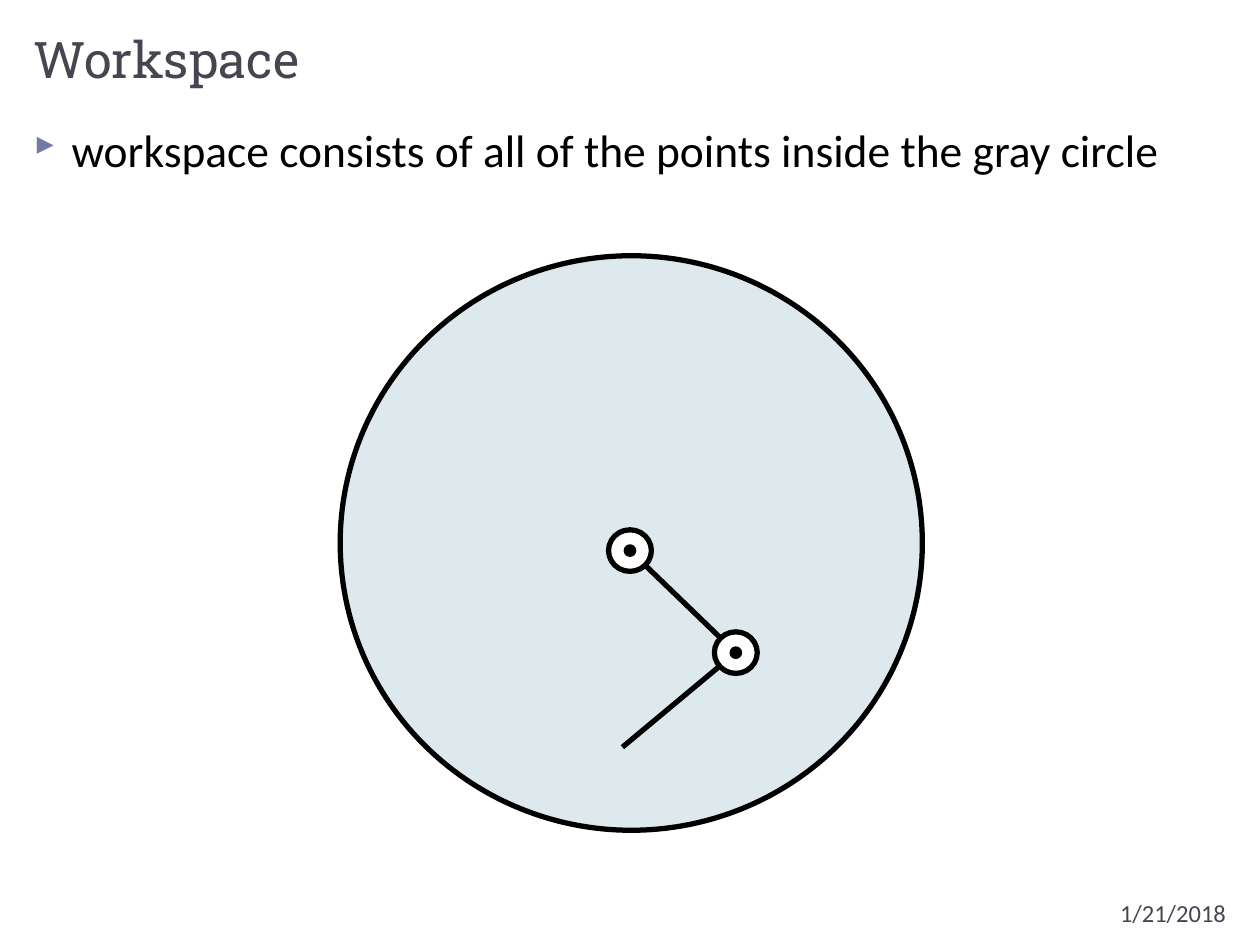
from lxml import etree
from pptx import Presentation
from pptx.dml.color import RGBColor
from pptx.enum.shapes import MSO_CONNECTOR, MSO_SHAPE
from pptx.enum.text import MSO_ANCHOR, PP_ALIGN
from pptx.oxml.ns import qn
from pptx.util import Inches, Pt

OVAL = MSO_SHAPE.OVAL
STRAIGHT = MSO_CONNECTOR.STRAIGHT
TOP, BOTTOM = MSO_ANCHOR.TOP, MSO_ANCHOR.BOTTOM
LEFT, RIGHT = PP_ALIGN.LEFT, PP_ALIGN.RIGHT


def color(value):
    return RGBColor.from_string(value)


class SlideBuilder:
    INK = "000000"
    HEADING = "464653"
    BULLET = "727CA3"
    AREA = "DDE9EC"
    WHITE = "FFFFFF"
    BODY_FONT = "Calibri"
    TITLE_FONT = "Roboto Slab"
    BULLET_FONT = "Wingdings 3"

    def __init__(self, page):
        self.page = page

    def text(self, words, place, font, align=LEFT, anchor=TOP, bullet=False):
        box = self.page.shapes.add_textbox(*map(Inches, place))
        frame = box.text_frame
        frame.word_wrap = True
        frame.vertical_anchor = anchor
        para = frame.paragraphs[0]
        para.alignment = align
        if bullet:
            self.bullet(para)
        span = para.add_run()
        span.text = words
        span.font.color.rgb = color(font["color"])
        for name in ("name", "size"):
            setattr(span.font, name, font[name])

    def bullet(self, para):
        properties = para._p.get_or_add_pPr()
        properties.set("marL", str(Inches(0.3)))
        properties.set("indent", str(Inches(-0.3)))
        tint = etree.SubElement(properties, qn("a:buClr"))
        etree.SubElement(tint, qn("a:srgbClr"), val=self.BULLET)
        etree.SubElement(properties, qn("a:buSzPct"), val="76000")
        # In this symbol font the closing brace is a right-pointing triangle
        etree.SubElement(properties, qn("a:buFont"),
                         typeface=self.BULLET_FONT, charset="2")
        etree.SubElement(properties, qn("a:buChar"), char="}")

    def ellipse(self, center, size, fill, weight=3):
        (x, y), (width, height) = center, size
        place = (x - width / 2, y - height / 2, width, height)
        shape = self.page.shapes.add_shape(OVAL, *map(Inches, place))
        shape.shadow.inherit = False
        shape.fill.solid()
        shape.fill.fore_color.rgb = color(fill)
        shape.line.color.rgb = color(self.INK)
        shape.line.width = Pt(weight)

    def joint(self, center):
        self.ellipse(center, (0.34, 0.33), self.WHITE)
        self.ellipse(center, (0.08, 0.08), self.INK, 1.5)

    def link(self, start, end):
        line = self.page.shapes.add_connector(STRAIGHT, *map(Inches, start + end))
        line.line.color.rgb = color(self.INK)
        line.line.width = Pt(3)
        etree.SubElement(line._element.spPr, qn("a:effectLst"))


def main():
    deck = Presentation()
    deck.slide_width, deck.slide_height = Inches(10), Inches(7.5)
    page = deck.slides.add_slide(deck.slide_layouts[6])
    slide = SlideBuilder(page)

    # Reachable workspace
    slide.ellipse((5.01, 4.31), (4.62, 4.56), slide.AREA)

    # Title, date and statement
    slide.text("Workspace", (0.17, 0.17, 9.67, 0.58),
               {"name": slide.TITLE_FONT, "size": Pt(28.8), "color": slide.HEADING},
               anchor=BOTTOM)
    slide.text("1/21/2018", (8, 7.08, 1.83, 0.27),
               {"name": slide.BODY_FONT, "size": Pt(14), "color": slide.HEADING},
               align=RIGHT)
    slide.text("workspace consists of all of the points inside the gray circle",
               (0.17, 0.92, 9.67, 6),
               {"name": slide.BODY_FONT, "size": Pt(26), "color": slide.INK},
               bullet=True)

    # Two-link arm: links first, joints on top
    base, elbow, tip = (5, 4.37), (5.84, 5.18), (4.94, 5.93)
    slide.link(elbow, base)
    slide.link(tip, elbow)
    for center in (elbow, base):
        slide.joint(center)

    deck.save("out.pptx")


if __name__ == "__main__":
    main()
